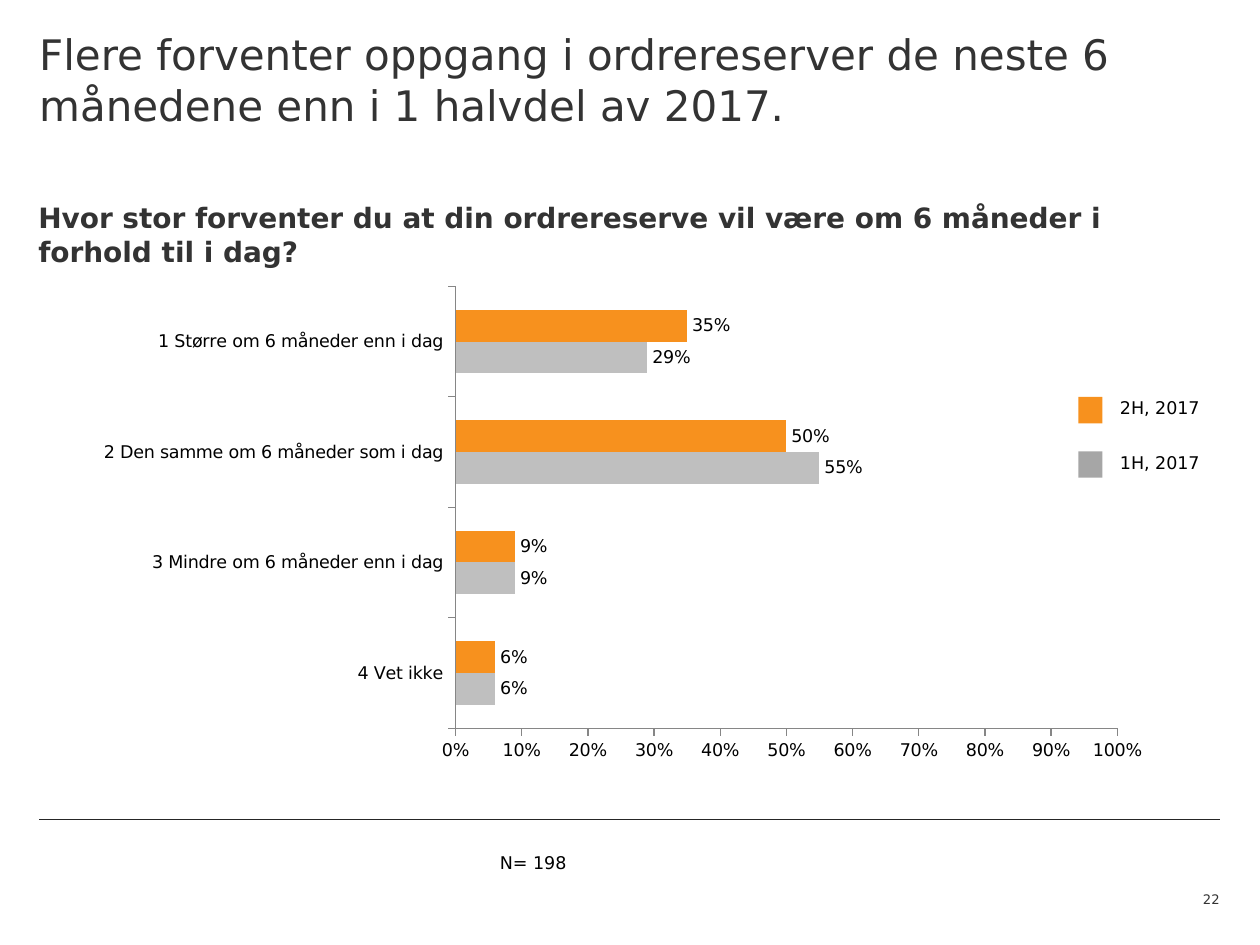
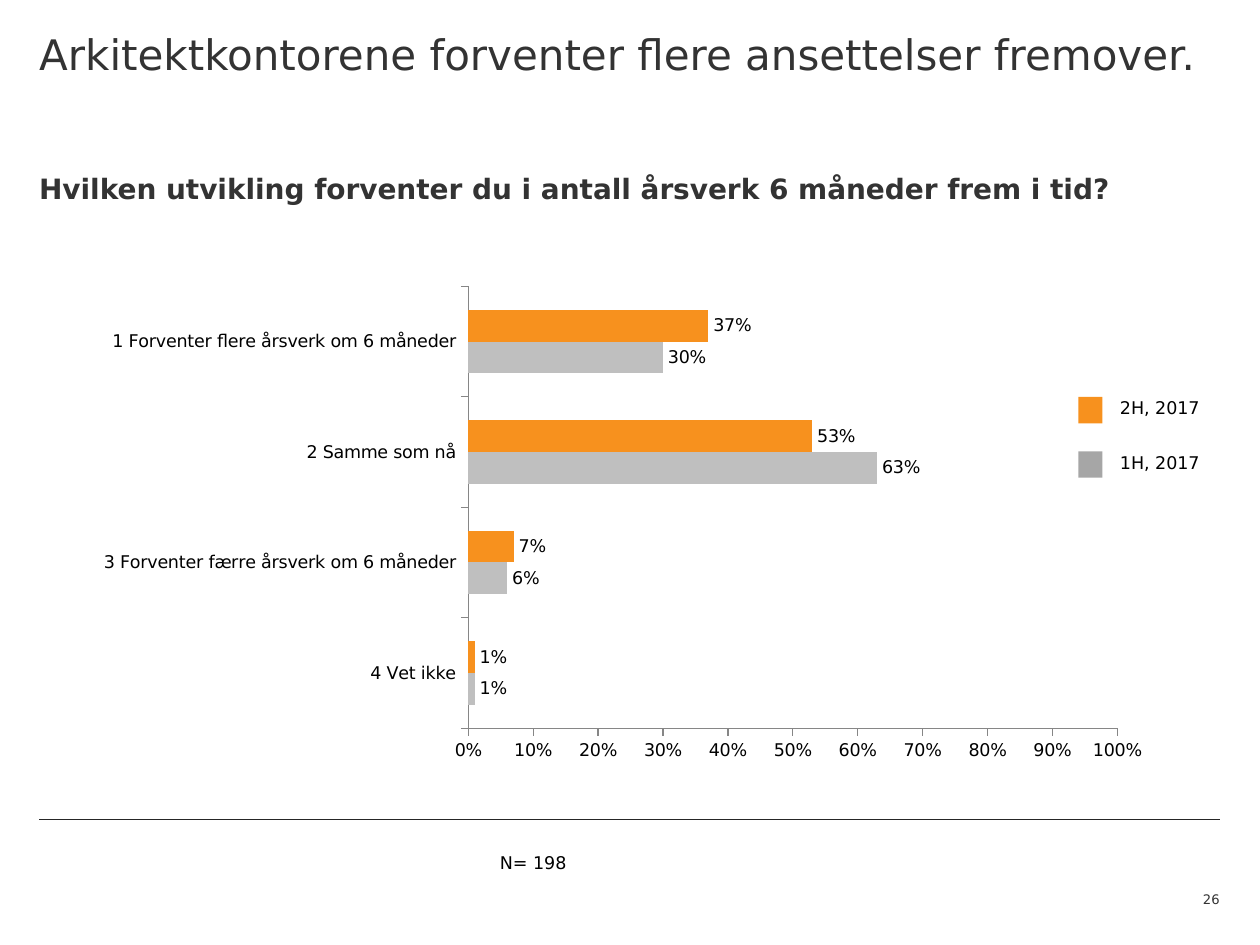
from lxml import etree
from pptx import Presentation
from pptx.chart.data import CategoryChartData
from pptx.dml.color import RGBColor
from pptx.enum.chart import XL_CHART_TYPE, XL_LABEL_POSITION, XL_TICK_MARK
from pptx.enum.shapes import MSO_CONNECTOR, MSO_SHAPE
from pptx.enum.text import MSO_ANCHOR, MSO_AUTO_SIZE, PP_ALIGN
from pptx.oxml.ns import qn
from pptx.util import Pt

FONT = "DejaVu Sans"
INK, BLACK, RULE, AXIS = "333333", "000000", "262626", "868686"
RED, ORANGE, BAR_GREY, KEY_GREY = "C50017", "F7911E", "BFBFBF", "A6A6A6"
LEFT, RIGHT = 22.4, 697


def rgb(value):
    return RGBColor.from_string(value)


class Deck:
    def __init__(self):
        self.prs = Presentation()
        self.prs.slide_width, self.prs.slide_height = Pt(720), Pt(540)
        self.s = None

    def add_slide(self, title, width):
        self.s = self.prs.slides.add_slide(self.prs.slide_layouts[5])
        sp = self.s.shapes.title
        sp.left, sp.top, sp.width, sp.height = Pt(LEFT), Pt(0), Pt(width), Pt(81.4)
        self.fill_text(sp, title, 24, INK, insets=(0, 16.56, 0, 0))

    def fill_text(self, sp, text, size, color, bold=False, align=PP_ALIGN.LEFT,
                  anchor=MSO_ANCHOR.TOP, insets=(7.2, 3.6, 7.2, 3.6), wrap=True):
        tf = sp.text_frame
        tf.text = text
        tf.auto_size = MSO_AUTO_SIZE.NONE
        tf.word_wrap = wrap
        tf.vertical_anchor = anchor
        tf.margin_left, tf.margin_top, tf.margin_right, tf.margin_bottom = map(Pt, insets)
        p = tf.paragraphs[0]
        p.alignment = align
        font = p.runs[0].font
        font.name, font.size, font.bold = FONT, Pt(size), bold
        font.color.rgb = rgb(color)

    def text(self, box, text, size, color, **style):
        sp = self.s.shapes.add_textbox(*map(Pt, box))
        self.fill_text(sp, text, size, color, **style)

    def rule(self, y):
        line = self.s.shapes.add_connector(
            MSO_CONNECTOR.STRAIGHT, Pt(LEFT), Pt(y), Pt(RIGHT), Pt(y))
        line.line.color.rgb = rgb(RULE)
        line.line.width = Pt(0.75)
        etree.SubElement(line._element.spPr, qn("a:effectLst"))

    def footer(self, number):
        self.rule(468.2)
        self.text((657.4, 497.9, 39.6, 20.2), str(number), 7.5, INK,
                  align=PP_ALIGN.RIGHT, anchor=MSO_ANCHOR.BOTTOM, insets=(0, 0, 0, 0))

    def legend_key(self, y, label, color):
        sp = self.s.shapes.add_shape(MSO_SHAPE.RECTANGLE, Pt(616.2), Pt(y), Pt(13.7), Pt(15.1))
        sp.shadow.inherit = False
        sp.fill.solid()
        sp.fill.fore_color.rgb = rgb(color)
        sp.line.fill.background()
        self.text((632.9, y - 3.3, 75.6, 19.4), label, 10, BLACK)

    def hide_empty_series(self, chart):
        for bars in chart.plots[0].series:
            if not bars.values:
                ser = bars._element
                ser.remove(ser.find(qn("c:val")))
        root = chart._chartSpace.find(qn("c:chart"))
        visible = root.find(qn("c:plotVisOnly"))
        if visible is None:
            visible = etree.Element(qn("c:plotVisOnly"))
            root.find(qn("c:plotArea")).addnext(visible)
        visible.set("val", "1")

    def bar_chart(self, categories, series):
        data = CategoryChartData(number_format="0%")
        data.categories = categories
        for number, (values, _) in enumerate(series, 1):
            data.add_series(f"Series {number}", values)
        chart = self.s.shapes.add_chart(
            XL_CHART_TYPE.BAR_CLUSTERED, Pt(47), Pt(158), Pt(617.8), Pt(282.2), data).chart
        chart.has_legend = chart.has_title = False
        chart.font.name, chart.font.size = FONT, Pt(10)
        chart.font.color.rgb = rgb(BLACK)
        plot = chart.plots[0]
        plot.gap_width, plot.overlap, plot.vary_by_categories = 150, 0, False
        for bars, (values, color) in zip(plot.series, series):
            bars.format.fill.solid()
            bars.format.fill.fore_color.rgb = rgb(color)
            if values:
                labels = bars.data_labels
                labels.show_value = True
                labels.number_format, labels.number_format_is_linked = "0%", False
                labels.position = XL_LABEL_POSITION.OUTSIDE_END
        self.hide_empty_series(chart)
        for axis in (chart.category_axis, chart.value_axis):
            axis.has_major_gridlines = False
            axis.major_tick_mark = XL_TICK_MARK.OUTSIDE
            axis.minor_tick_mark = XL_TICK_MARK.NONE
            axis.format.line.color.rgb = rgb(AXIS)
            axis.format.line.width = Pt(0.75)
        axis = chart.value_axis
        axis.minimum_scale, axis.maximum_scale, axis.major_unit = 0, 1, 0.1
        axis.tick_labels.number_format = "0%"
        axis.tick_labels.number_format_is_linked = False

    def survey_slide(self, title, title_width, number, question, question_at,
                     categories, first_half, second_half):
        self.add_slide(title, title_width)
        self.footer(number)
        self.text((*question_at, 674.6, 59.8), question, 16, INK, bold=True,
                  insets=(0, 16.9, 0, 0))
        self.bar_chart(categories, [([], RED), (first_half, BAR_GREY), (second_half, ORANGE)])
        self.text((278.6, 483.1, 53.3, 19.4), "N= 198", 10, BLACK, wrap=False)
        self.legend_key(226.8, "2H, 2017", ORANGE)
        self.legend_key(257.9, "1H, 2017", KEY_GREY)


def main():
    deck = Deck()
    deck.survey_slide(
        "Flere forventer oppgang i ordrereserver de neste 6 månedene enn i 1 halvdel av 2017.",
        679.7, 22,
        "Hvor stor forventer du at din ordrereserve vil være om 6 måneder i forhold til i dag?",
        (21.9, 97.9),
        ["4 Vet ikke", "3 Mindre om 6 måneder enn i dag",
         "2 Den samme om 6 måneder som i dag", "1 Større om 6 måneder enn i dag"],
        [0.06, 0.09, 0.55, 0.29], [0.06, 0.09, 0.5, 0.35])
    deck.survey_slide(
        "Arkitektkontorene forventer flere ansettelser fremover.",
        674.6, 26,
        "Hvilken utvikling forventer du i antall årsverk 6 måneder frem i tid?",
        (LEFT, 81.4),
        ["4 Vet ikke", "3 Forventer færre årsverk om 6 måneder",
         "2 Samme som nå", "1 Forventer flere årsverk om 6 måneder"],
        [0.01, 0.06, 0.63, 0.3], [0.01, 0.07, 0.53, 0.37])
    deck.prs.save("out.pptx")


if __name__ == "__main__":
    main()
